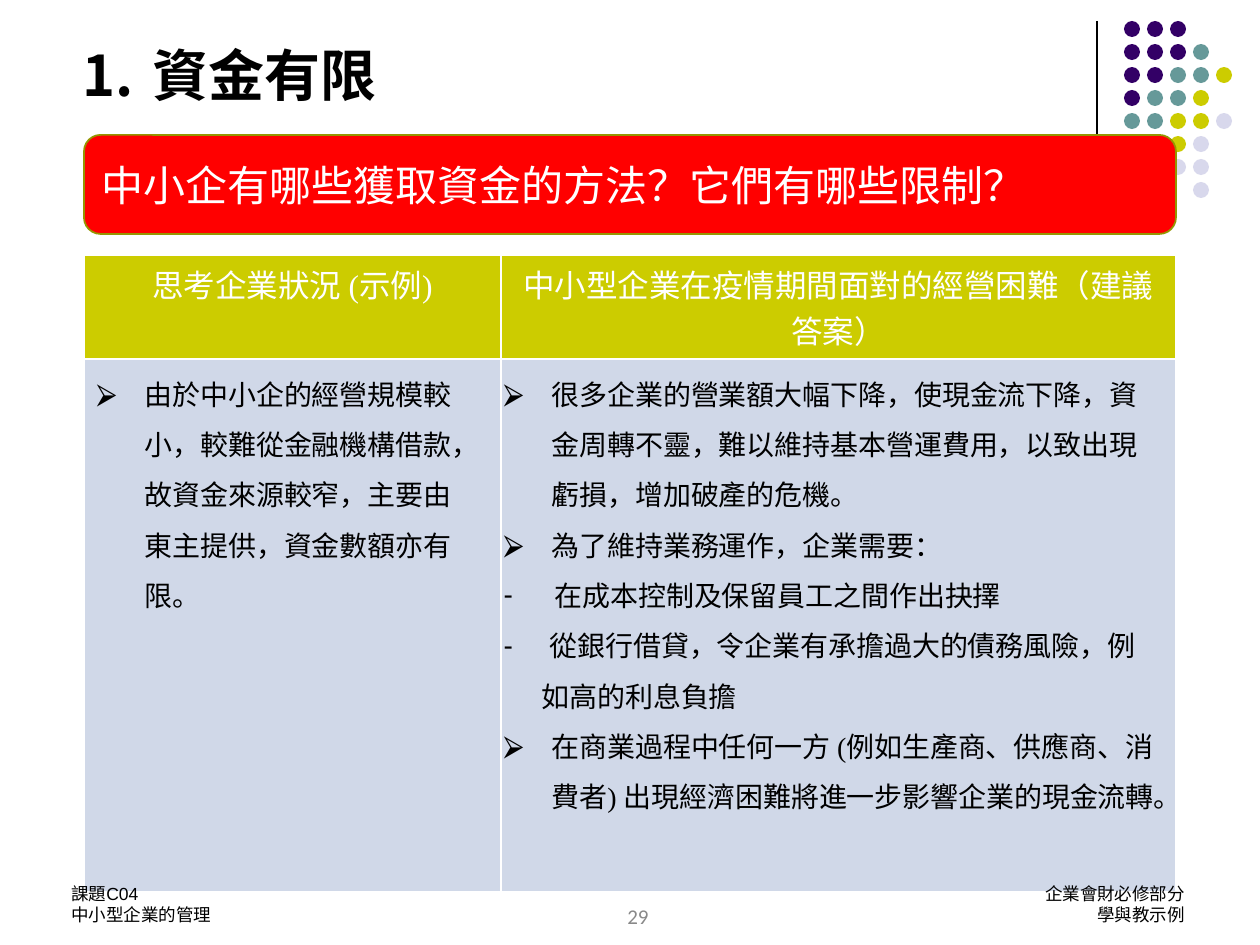
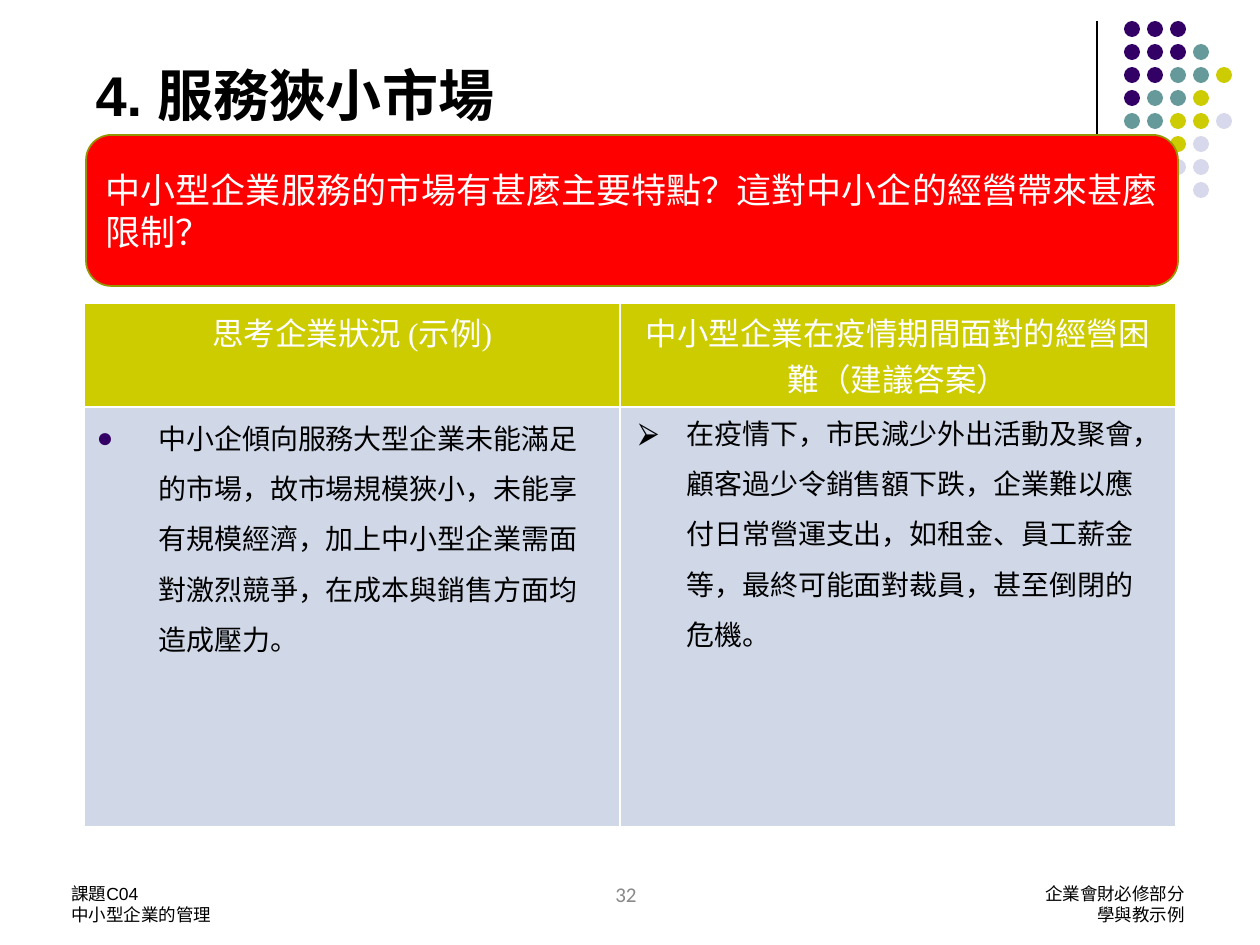
"""Build two slides on the limits and difficulties of small and medium enterprises."""
from lxml import etree
from pptx import Presentation
from pptx.dml.color import RGBColor
from pptx.enum.shapes import MSO_CONNECTOR, MSO_SHAPE
from pptx.enum.text import MSO_ANCHOR, MSO_AUTO_SIZE, PP_ALIGN
from pptx.oxml.ns import qn
from pptx.util import Pt

PX = 914400 / 126
COLORS = {
    "black": "000000", "white": "FFFFFF", "red": "FF0000", "olive": "959500",
    "purple": "330066", "teal": "669999", "lime": "CCCC00", "lavender": "D8D8EC",
    "cell": "D0D8E8", "grey": "898989",
}
RGB = {name: RGBColor.from_string(value) for name, value in COLORS.items()}
DOT_COLORS = {"P": "purple", "T": "teal", "L": "lime", "V": "lavender"}
DOT_ROWS = ["PPP", "PPPT", "PPTTL", "PTTL", "TTLLV", "TLLV", "  VV", "   V"]
DOT_SIZE, DOT_STEP = 16, 23
TABLE_HEADERS = ["思考企業狀況 (示例)", "中小型企業在疫情期間面對的經營困難（建議答案）"]
FOOTERS = [
    (59, 294, PP_ALIGN.LEFT, ["課題C04", "中小型企業的管理"]),
    (730, 467, PP_ALIGN.RIGHT, ["企業會財必修部分", "學與教示例"]),
]
ARROW, DASH, DISC = "⮚", "-", "●"

SLIDES = [
    {
        "title": "資金有限", "title_box": (0, 0, 1197, 115),
        "title_indent": (140, -70), "numbered": True,
        "banner": "中小企有哪些獲取資金的方法？它們有哪些限制？",
        "banner_box": (84, 135, 1092, 99), "banner_font": ("Times New Roman", 24),
        "table_top": 255, "columns": (417, 675), "rows": (88, 533),
        "number": "29", "number_at": (491, 897),
        "lists": [
            ((84, 354, 407, 318), "Arial", [
                (ARROW, "black", 48, -48, "由於中小企的經營規模較小，較難從金融機構借款，故資金來源較窄，主要由東主提供，資金數額亦有限。"),
            ]),
            ((491, 354, 684, 471), "Times New Roman", [
                (ARROW, "black", 48, -48, "很多企業的營業額大幅下降，使現金流下降，資金周轉不靈，難以維持基本營運費用，以致出現虧損，增加破產的危機。"),
                (ARROW, "black", 48, -48, "為了維持業務運作，企業需要："),
                (DASH, "black", 51, -51, "在成本控制及保留員工之間作出抉擇"),
                (DASH, "black", 46, -46, "從銀行借貸，令企業有承擔過大的債務風險，例"),
                (None, "black", 38, 0, "如高的利息負擔"),
                (ARROW, "black", 48, -48, "在商業過程中任何一方 (例如生產商、供應商、消費者) 出現經濟困難將進一步影響企業的現金流轉。"),
            ]),
        ],
    },
    {
        "title": "4. 服務狹小市場", "title_box": (63, -4, 1134, 139),
        "title_indent": (20, 0), "numbered": False,
        "banner": "中小型企業服務的市場有甚麼主要特點？這對中小企的經營帶來甚麼限制？",
        "banner_box": (86, 135, 1092, 151), "banner_font": ("Roboto", 20),
        "table_top": 303, "columns": (536, 556), "rows": (98, 420),
        "number": "32", "number_at": (479, 875),
        "lists": [
            ((84, 398, 517, 267), "Arial", [
                (DISC, "purple", 62, -62, "中小企傾向服務大型企業未能滿足的市場，故市場規模狹小，未能享有規模經濟，加上中小型企業需面對激烈競爭，在成本與銷售方面均造成壓力。"),
            ]),
            ((626, 393, 539, 267), "Arial", [
                (ARROW, "black", 48, -48, "在疫情下，市民減少外出活動及聚會，顧客過少令銷售額下跌，企業難以應付日常營運支出，如租金、員工薪金等，最終可能面對裁員，甚至倒閉的危機。"),
            ]),
        ],
    },
]


def px(*lengths):
    """Turn pixel lengths into EMU."""
    return [round(length * PX) for length in lengths]


def format_paragraph(paragraph, text, font, size, color, align=PP_ALIGN.LEFT,
                     spacing=None, indent=None, bullet=None, bullet_color="black", bold=False):
    """Fill one paragraph and set its layout, bullet and font."""
    paragraph.text = text
    paragraph.alignment = align
    paragraph.space_before = Pt(0)
    if spacing:
        paragraph.line_spacing = spacing
    if indent:
        properties = paragraph._p.get_or_add_pPr()
        left, first = px(*indent)
        properties.set("marL", str(left))
        properties.set("indent", str(first))
        if bullet:
            fill = etree.SubElement(properties, qn("a:buClr"))
            etree.SubElement(fill, qn("a:srgbClr"), val=COLORS[bullet_color])
            etree.SubElement(properties, qn("a:buFont"), typeface="Arial")
            if bullet == "1.":
                etree.SubElement(properties, qn("a:buAutoNum"), type="arabicPeriod")
            else:
                etree.SubElement(properties, qn("a:buChar"), char=bullet)
        else:
            etree.SubElement(properties, qn("a:buNone"))
    paragraph.font.name = font
    paragraph.font.size = Pt(size)
    paragraph.font.bold = bold
    paragraph.font.color.rgb = RGB[color]


presentation = Presentation()
presentation.slide_width, presentation.slide_height = px(1260, 945)

for content in SLIDES:
    slide = presentation.slides.add_slide(presentation.slide_layouts[3])
    shapes = slide.shapes
    title, *bodies = slide.placeholders

    divider = shapes.add_connector(MSO_CONNECTOR.STRAIGHT, *px(1097, 21, 1097, 231))
    divider.line.color.rgb = RGB["black"]
    divider.line.width = Pt(0.75)
    etree.SubElement(divider._element.spPr, qn("a:effectLst"))

    dots = shapes.add_group_shape()
    for row, pattern in enumerate(DOT_ROWS):
        for column, key in enumerate(pattern):
            if key in DOT_COLORS:
                dot = dots.shapes.add_shape(MSO_SHAPE.OVAL, *px(
                    1124 + column * DOT_STEP, 21 + row * DOT_STEP, DOT_SIZE, DOT_SIZE))
                dot.shadow.inherit = False
                dot.fill.solid()
                dot.fill.fore_color.rgb = RGB[DOT_COLORS[key]]
                dot.line.fill.background()

    title.left, title.top, title.width, title.height = px(*content["title_box"])
    title.text_frame.vertical_anchor = MSO_ANCHOR.BOTTOM
    title.text_frame.auto_size = MSO_AUTO_SIZE.NONE
    format_paragraph(title.text_frame.paragraphs[0], content["title"], "Arial", 32, "black",
                     spacing=0.9, indent=content["title_indent"],
                     bullet="1." if content["numbered"] else None, bold=True)

    frame = shapes.add_table(2, 2, *px(
        84, content["table_top"], sum(content["columns"]), sum(content["rows"])))
    table = frame.table
    for index in range(2):
        table.columns[index].width = px(content["columns"][index])[0]
        table.rows[index].height = px(content["rows"][index])[0]
        for row, color in enumerate(["lime", "cell"]):
            cell = table.cell(row, index)
            cell.fill.solid()
            cell.fill.fore_color.rgb = RGB[color]
        format_paragraph(table.cell(0, index).text_frame.paragraphs[0], TABLE_HEADERS[index],
                         "Times New Roman", 18, "white", PP_ALIGN.CENTER)

    for body, (box, font, items) in zip(bodies, content["lists"]):
        shapes._spTree.append(body._element)
        body.left, body.top, body.width, body.height = px(*box)
        text_frame = body.text_frame
        text_frame.auto_size = MSO_AUTO_SIZE.NONE
        for index, (bullet, bullet_color, left, first, text) in enumerate(items):
            paragraph = text_frame.add_paragraph() if index else text_frame.paragraphs[0]
            format_paragraph(paragraph, text, font, 16, "black", spacing=1.5,
                             indent=(left, first), bullet=bullet, bullet_color=bullet_color)

    banner = shapes.add_shape(MSO_SHAPE.ROUNDED_RECTANGLE, *px(*content["banner_box"]))
    banner.shadow.inherit = False
    banner.fill.solid()
    banner.fill.fore_color.rgb = RGB["red"]
    banner.line.color.rgb = RGB["olive"]
    banner.line.width = Pt(1)
    banner.text_frame.vertical_anchor = MSO_ANCHOR.MIDDLE
    format_paragraph(banner.text_frame.paragraphs[0], content["banner"],
                     *content["banner_font"], "white")

    number = shapes.add_textbox(*px(*content["number_at"], 294, 63))
    number.text_frame.word_wrap = True
    format_paragraph(number.text_frame.paragraphs[0], content["number"],
                     "Calibri", 12, "grey", PP_ALIGN.CENTER)

    for left, width, align, lines in FOOTERS:
        footer = shapes.add_textbox(*px(left, 877, width, 55))
        footer.text_frame.word_wrap = True
        for index, line in enumerate(lines):
            paragraph = footer.text_frame.add_paragraph() if index else footer.text_frame.paragraphs[0]
            format_paragraph(paragraph, line, "Arial", 10, "black", align)

presentation.save("out.pptx")
